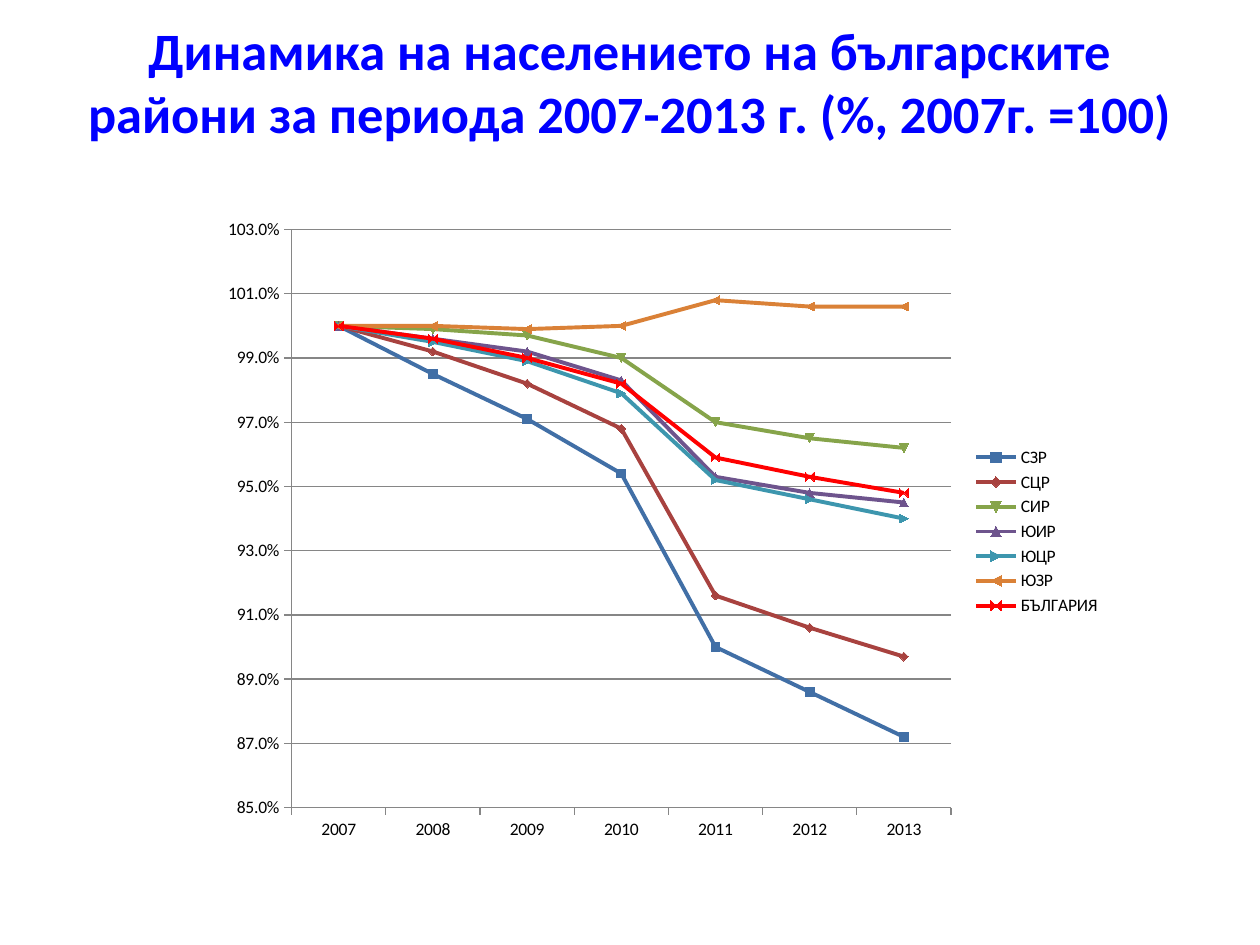
import pptx
import pptx.util
import pptx.chart.data
import pptx.dml.color
import pptx.enum.chart
import pptx.enum.text
import pptx.oxml

Cm, Pt = pptx.util.Cm, pptx.util.Pt
enum = pptx.enum.chart

HUES = {
    "title": "0000FF", "text": "000000", "grid": "868686",
    "СЗР": "416FA6", "СЦР": "A8423F", "СИР": "86A44A", "ЮИР": "6E548D",
    "ЮЦР": "3D96AE", "ЮЗР": "DA8137", "БЪЛГАРИЯ": "FF0000",
}
YEARS = [str(year) for year in range(2007, 2014)]
# Population as a share of the 2007 level
SHARES = {
    "СЗР": (1, 0.985, 0.971, 0.954, 0.9, 0.886, 0.872),
    "СЦР": (1, 0.992, 0.982, 0.968, 0.916, 0.906, 0.897),
    "СИР": (1, 0.999, 0.997, 0.99, 0.97, 0.965, 0.962),
    "ЮИР": (1, 0.996, 0.992, 0.983, 0.953, 0.948, 0.945),
    "ЮЦР": (1, 0.995, 0.989, 0.979, 0.952, 0.946, 0.94),
    "ЮЗР": (1, 1, 0.999, 1, 1.008, 1.006, 1.006),
    "БЪЛГАРИЯ": (1, 0.996, 0.99, 0.982, 0.959, 0.953, 0.948),
}
PLOT = {"x": 0.09, "y": 0.03, "w": 0.73, "h": 0.9}


def hue(name):
    return pptx.dml.color.RGBColor.from_string(HUES[name])


def put(item, **values):
    for name, value in values.items():
        setattr(item, name, value)


def style(font, size, name, bold=False):
    put(font, name="Calibri", size=Pt(size), bold=bold)
    font.color.rgb = hue(name)


def stroke(line, name, width):
    line.color.rgb = hue(name)
    line.width = Pt(width)


def add_title(slide, text):
    title = slide.shapes.title
    put(title, left=Cm(1.27), top=Cm(1.07), width=Cm(22.86), height=Cm(2.41))
    frame = title.text_frame
    # The deep bottom inset lifts the two lines
    put(frame, text=text, word_wrap=True, margin_bottom=Cm(1.4),
        auto_size=pptx.enum.text.MSO_AUTO_SIZE.NONE,
        vertical_anchor=pptx.enum.text.MSO_ANCHOR.MIDDLE)
    para = frame.paragraphs[0]
    para.alignment = pptx.enum.text.PP_ALIGN.CENTER
    style(para.runs[0].font, 30, "title", True)


def set_plot(chart):
    """Fix the inner plot area as shares of the chart frame."""
    area = chart._chartSpace.chart.plotArea
    for old in area.findall(pptx.oxml.ns.qn("c:layout")):
        area.remove(old)
    sizes = "".join(f'<c:{key} val="{val}"/>' for key, val in PLOT.items())
    area.insert(0, pptx.oxml.parse_xml(
        f'<c:layout {pptx.oxml.ns.nsdecls("c")}><c:manualLayout>'
        '<c:layoutTarget val="inner"/><c:xMode val="edge"/>'
        f'<c:yMode val="edge"/>{sizes}</c:manualLayout></c:layout>'))


def set_axes(chart):
    scale = chart.value_axis
    put(scale, minimum_scale=0.85, maximum_scale=1.03, major_unit=0.02,
        has_major_gridlines=True)
    put(scale.tick_labels, number_format="0.0%", number_format_is_linked=False)
    stroke(scale.major_gridlines.format.line, "grid", 0.75)
    for axis in (scale, chart.category_axis):
        axis.major_tick_mark = enum.XL_TICK_MARK.OUTSIDE
        stroke(axis.format.line, "grid", 0.75)
        style(axis.tick_labels.font, 10, "text")


def set_lines(chart):
    for line in chart.plots[0].series:
        line.smooth = False
        stroke(line.format.line, line.name, 2.25)
        mark = line.marker
        mark.size = 5
        mark.format.fill.solid()
        mark.format.fill.fore_color.rgb = hue(line.name)
        stroke(mark.format.line, line.name, 0.75)


def add_graph(slide):
    data = pptx.chart.data.CategoryChartData(number_format="0.0%")
    data.categories = YEARS
    for name, values in SHARES.items():
        data.add_series(name, values)
    chart = slide.shapes.add_chart(
        enum.XL_CHART_TYPE.LINE_MARKERS, Cm(4.24), Cm(4.24),
        Cm(18.21), Cm(12.95), data).chart
    put(chart, has_title=False, has_legend=True)
    style(chart.font, 10, "text")
    chart.plots[0].vary_by_categories = False
    put(chart.legend, position=enum.XL_LEGEND_POSITION.RIGHT,
        include_in_layout=False)
    style(chart.legend.font, 10, "text")
    set_plot(chart)
    set_axes(chart)
    set_lines(chart)


def main():
    deck = pptx.Presentation()
    put(deck, slide_width=Cm(25.4), slide_height=Cm(19.05))
    slide = deck.slides.add_slide(deck.slide_layouts[5])
    add_title(slide, "Динамика на населението на българските райони "
                     "за периода 2007-2013 г. (%, 2007г. =100)")
    add_graph(slide)
    deck.save("out.pptx")


if __name__ == "__main__":
    main()
